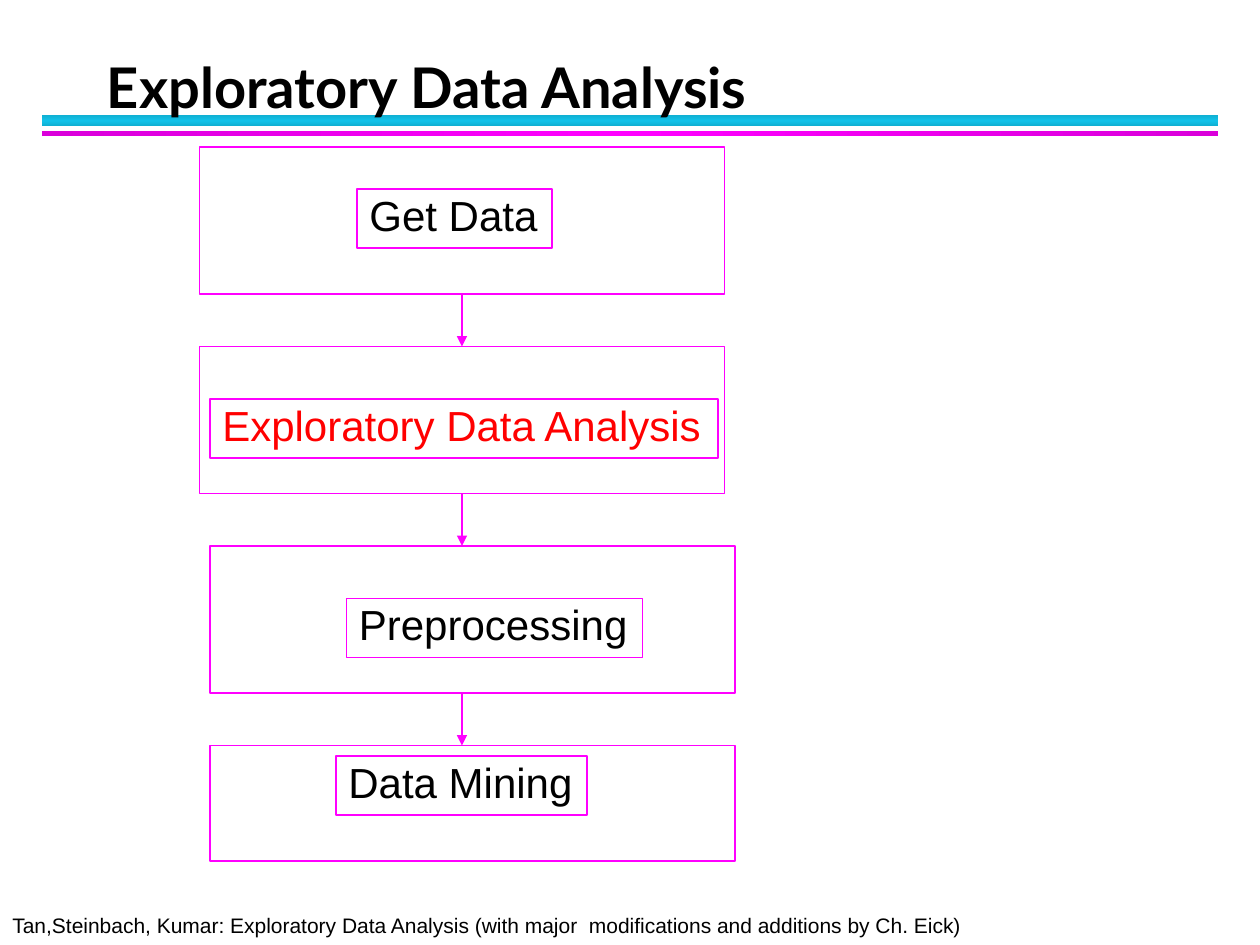
from copy import deepcopy
from dataclasses import dataclass

from lxml import etree
from pptx import Presentation
from pptx.dml.color import RGBColor as RGB
from pptx.enum.shapes import MSO_CONNECTOR as CONN, MSO_SHAPE as SHAPE
from pptx.enum.text import MSO_ANCHOR as ANCHOR, MSO_AUTO_SIZE as AUTO, PP_ALIGN as ALIGN
from pptx.oxml.ns import qn
from pptx.util import Pt


@dataclass(frozen=True)
class Theme:
    black: RGB = RGB(0, 0, 0)
    red: RGB = RGB(255, 0, 0)
    magenta: RGB = RGB(255, 0, 255)
    teal_bar: tuple = (RGB(0x10, 0xB0, 0xD3), RGB(0x12, 0xC2, 0xE9))
    magenta_bar: tuple = (RGB(0xDA, 0, 0xDA), RGB(255, 0, 255))
    title_font: str = "Lato"
    body_font: str = "Arial"
    title_size: int = 32
    label_size: int = 24
    footer_size: int = 12
    line_width: int = 1


THEME = Theme()
BOX_LEFT, BOX_TOP, BOX_WIDTH, BOX_HEIGHT, PITCH = 114, 84, 300, 84, 114
ARROW_X = BOX_LEFT + BOX_WIDTH / 2

# Each step: box offset, box height, label text, label left, top, width, colour
STEPS = [
    (0, BOX_HEIGHT, "Get Data", 204, 108, 111.6, THEME.black),
    (0, BOX_HEIGHT, "Exploratory Data Analysis", 120, 228, 290.2, THEME.red),
    (6, BOX_HEIGHT, "Preprocessing", 198, 342, 169.2, THEME.black),
    (6, 66, "Data Mining", 192, 432, 143.3, THEME.black),
]


def set_attrs(obj, values):
    for name, value in values.items():
        setattr(obj, name, value)


def add_rect(s, left, top, width, height):
    sp = s.shapes.add_shape(SHAPE.RECTANGLE, Pt(left), Pt(top), Pt(width), Pt(height))
    sp.shadow.inherit = False
    return sp


def add_bar(s, top, height, colors, angle):
    """Bar whose gradient runs from edge to middle and back to edge colour."""
    sp = add_rect(s, 24, top, 672, height)
    sp.line.fill.background()
    sp.fill.gradient()
    sp.fill.gradient_angle = angle
    first, middle = sp.fill.gradient_stops
    first.color.rgb, middle.color.rgb = colors
    middle.position = 0.5
    stops = sp._element.spPr.find(".//" + qn("a:gsLst"))
    last = deepcopy(stops[0])
    last.set("pos", "100000")
    stops.append(last)


def add_box(s, left, top, width, height):
    sp = add_rect(s, left, top, width, height)
    sp.fill.background()
    sp.line.color.rgb = THEME.magenta
    sp.line.width = Pt(THEME.line_width)
    return sp


def write_text(sp, text, font, frame, paragraph):
    tf = sp.text_frame
    set_attrs(tf, frame)
    p = tf.paragraphs[0]
    set_attrs(p, {"alignment": ALIGN.LEFT, **paragraph})
    r = p.add_run()
    r.text = text
    color = font.pop("color")
    set_attrs(r.font, font)
    r.font.color.rgb = color


def write_body(sp, text, size, color):
    write_text(
        sp, text,
        {"name": THEME.body_font, "size": Pt(size), "color": color},
        {"word_wrap": False, "auto_size": AUTO.SHAPE_TO_FIT_TEXT,
         "vertical_anchor": ANCHOR.TOP},
        {"line_spacing": 0.9, "space_after": Pt(4)},
    )


def add_title(s, text):
    sp = s.shapes.add_textbox(Pt(54), Pt(30), Pt(652), Pt(42))
    write_text(
        sp, text,
        {"name": THEME.title_font, "size": Pt(THEME.title_size),
         "bold": True, "color": THEME.black},
        {"word_wrap": True, "auto_size": AUTO.NONE, "vertical_anchor": ANCHOR.BOTTOM},
        {"line_spacing": Pt(36)},
    )


def add_footer(s, text):
    sp = s.shapes.add_textbox(Pt(0), Pt(519.8), Pt(561.6), Pt(20.2))
    write_body(sp, text, THEME.footer_size, THEME.black)


def add_arrow(s, upper, lower):
    x = Pt(ARROW_X)
    cxn = s.shapes.add_connector(CONN.STRAIGHT, x, upper.top + upper.height, x, lower.top)
    cxn.line.color.rgb = THEME.magenta
    cxn.line.width = Pt(THEME.line_width)
    etree.SubElement(cxn.line._get_or_add_ln(), qn("a:tailEnd"), type="triangle")
    etree.SubElement(cxn._element.spPr, qn("a:effectLst"))
    # Join only the ends that meet the middle of a box side
    if upper.left + upper.width // 2 == x:
        cxn.begin_connect(upper, 2)
    if lower.left + lower.width // 2 == x:
        cxn.end_connect(lower, 0)


def add_step(s, index, offset, height, text, left, top, width, color):
    box = add_box(s, BOX_LEFT + offset, BOX_TOP + index * PITCH, BOX_WIDTH, height)
    label = add_box(s, left, top, width, 33.8)
    write_body(label, text, THEME.label_size, color)
    return box


def main():
    prs = Presentation()
    prs.slide_width, prs.slide_height = Pt(720), Pt(540)
    s = prs.slides.add_slide(prs.slide_layouts[6])

    # Rules, footer and title
    add_bar(s, 66, 6, THEME.teal_bar, 90)
    add_bar(s, 75, 3, THEME.magenta_bar, 0)
    add_footer(s, "Tan,Steinbach, Kumar: Exploratory Data Analysis "
                  "(with major  modifications and additions by Ch. Eick)")
    add_title(s, "Exploratory Data Analysis")

    # Process steps and the arrows between them
    boxes = [add_step(s, i, *step) for i, step in enumerate(STEPS)]
    for upper, lower in zip(boxes, boxes[1:]):
        add_arrow(s, upper, lower)

    prs.save("out.pptx")


if __name__ == "__main__":
    main()
